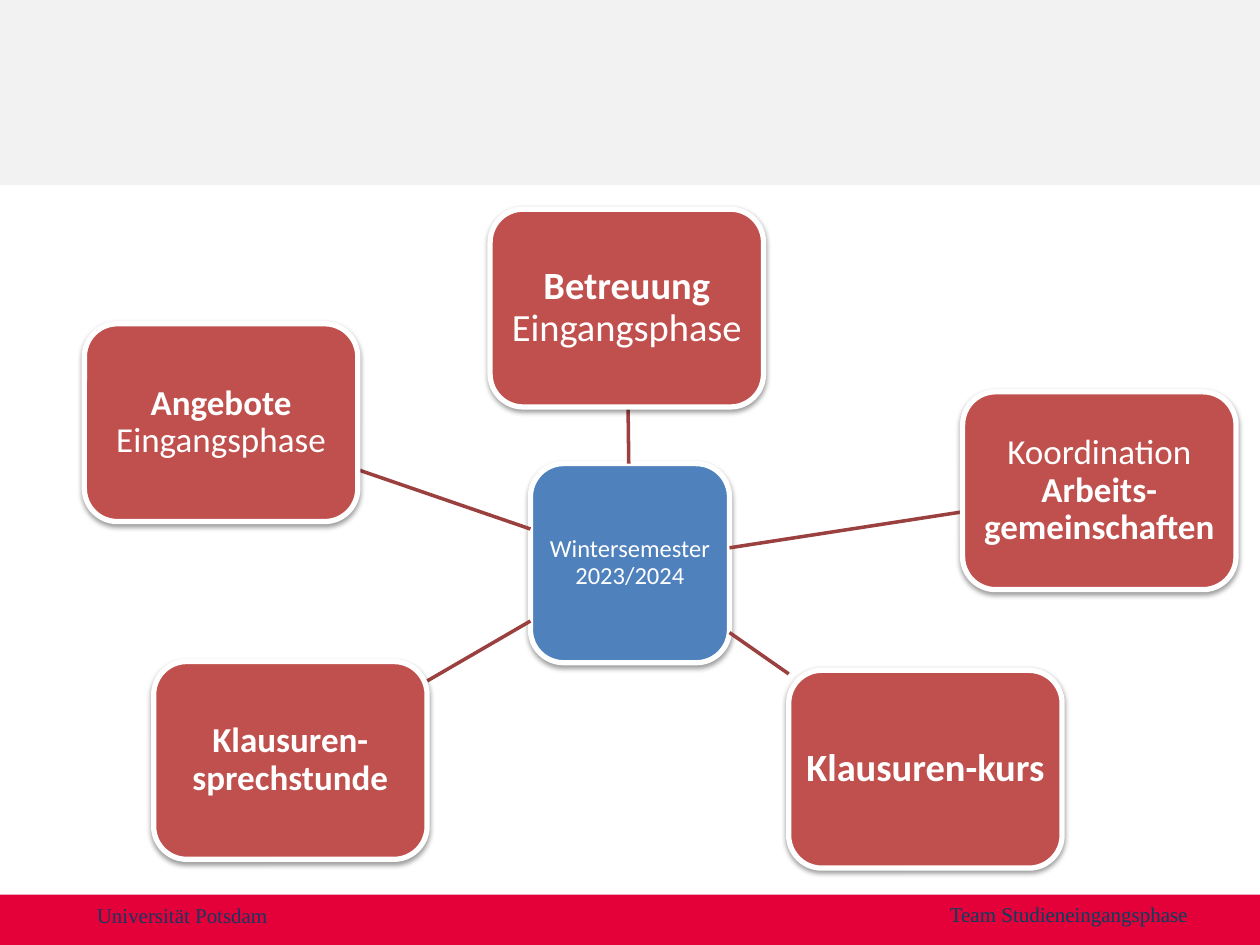
from typing import NamedTuple

from lxml.etree import SubElement
from pptx import Presentation
from pptx.dml.color import RGBColor
from pptx.enum.shapes import MSO_CONNECTOR, MSO_SHAPE
from pptx.enum.text import MSO_ANCHOR, PP_ALIGN
from pptx.oxml.ns import qn
from pptx.util import Inches, Pt

WHITE = RGBColor(0xFF, 0xFF, 0xFF)
HEADER_GREY = RGBColor(0xF2, 0xF2, 0xF2)
FOOTER_RED = RGBColor(0xE4, 0x01, 0x3A)
UNIVERSITY_BLUE = RGBColor(0x17, 0x37, 0x5E)
TEAM_BLUE = RGBColor(0x01, 0x42, 0x60)
HUB_BLUE = RGBColor(0x4F, 0x81, 0xBD)
TOPIC_RED = RGBColor(0xC0, 0x50, 0x4D)
SPOKE_RED = RGBColor(0x9A, 0x40, 0x3E)

SLIDE_WIDTH, SLIDE_HEIGHT = Inches(10), Inches(7.5)


class Area(NamedTuple):
    """Left, top, width and height in percent of the slide."""
    left: float
    top: float
    width: float
    height: float

    def place(self) -> tuple[int, int, int, int]:
        return (across(self.left), down(self.top),
                across(self.width), down(self.height))


class Box(NamedTuple):
    """A rounded box around a centre, in percent of the slide."""
    x: float
    y: float
    runs: tuple[tuple[str, bool], ...]
    size: int
    width: float = 21.7
    height: float = 20.93
    fill: RGBColor = TOPIC_RED
    inset: float = 0.06


def across(share: float) -> int:
    return round(SLIDE_WIDTH * share / 100)


def down(share: float) -> int:
    return round(SLIDE_HEIGHT * share / 100)


HUB = Box(50, 59.6, (("Wintersemester 2023/2024", False),), 14,
          15.8, 21.07, HUB_BLUE, 0.04)
TOPICS = (
    Box(49.75, 32.6, (("Betreuung", True), (" Eingangsphase", False)), 22),
    Box(87.25, 51.93, (("Koordination ", False),
                       ("Arbeits-gemeinschaften", True)), 20),
    Box(73.45, 81.4, (("Klausuren-kurs", True),), 22),
    Box(23.05, 80.47, (("Klausuren-sprechstunde", True),), 20),
    Box(17.55, 44.73, (("Angebote ", True), ("Eingangsphase", False)), 20),
)


def draw_band(slide, area: Area, colour: RGBColor) -> None:
    band = slide.shapes.add_shape(MSO_SHAPE.RECTANGLE, *area.place())
    band.shadow.inherit = False
    band.fill.solid()
    band.fill.fore_color.rgb = colour
    band.line.fill.background()


def draw_label(slide, area: Area, text: str, colour: RGBColor,
               anchor: MSO_ANCHOR, wrap: bool) -> None:
    frame = slide.shapes.add_textbox(*area.place()).text_frame
    frame.word_wrap = wrap
    frame.vertical_anchor = anchor
    frame.text = text
    font = frame.paragraphs[0].runs[0].font
    font.name, font.size = "Times New Roman", Pt(12)
    font.color.rgb = colour


def add_soft_shadow(shape) -> None:
    shape.shadow.inherit = False
    effects = shape._element.spPr.find(qn("a:effectLst"))
    shadow = SubElement(effects, qn("a:outerShdw"), blurRad=str(Pt(3.1)),
                        dist=str(Pt(1.6)), dir="5400000", rotWithShape="0")
    black = SubElement(shadow, qn("a:srgbClr"), val="000000")
    SubElement(black, qn("a:alpha"), val="38000")


def draw_box(slide, box: Box) -> None:
    area = Area(box.x - box.width / 2, box.y - box.height / 2,
                box.width, box.height)
    shape = slide.shapes.add_shape(MSO_SHAPE.ROUNDED_RECTANGLE, *area.place())
    shape.fill.solid()
    shape.fill.fore_color.rgb = box.fill
    shape.line.color.rgb = WHITE
    shape.line.width = Pt(3)
    add_soft_shadow(shape)

    frame = shape.text_frame
    frame.word_wrap = True
    frame.vertical_anchor = MSO_ANCHOR.MIDDLE
    frame.margin_left = frame.margin_right = Inches(box.inset)
    frame.margin_top = frame.margin_bottom = Inches(box.inset)
    paragraph = frame.paragraphs[0]
    paragraph.alignment = PP_ALIGN.CENTER
    paragraph.line_spacing = 0.9
    for text, bold in box.runs:
        run = paragraph.add_run()
        run.text = text
        run.font.name, run.font.size = "Calibri", Pt(box.size)
        run.font.bold = bold
        run.font.color.rgb = WHITE


def edge_towards(box: Box, other: Box) -> tuple[int, int]:
    """Point where the line between two centres leaves the box."""
    dx, dy = other.x - box.x, other.y - box.y
    reach = 1 / max(abs(dx) * 2 / box.width, abs(dy) * 2 / box.height)
    return across(box.x + dx * reach), down(box.y + dy * reach)


def draw_spoke(slide, hub: Box, topic: Box) -> None:
    spoke = slide.shapes.add_connector(
        MSO_CONNECTOR.STRAIGHT,
        *edge_towards(hub, topic), *edge_towards(topic, hub))
    spoke.line.color.rgb = SPOKE_RED
    spoke.line.width = Pt(2)
    SubElement(spoke._element.spPr, qn("a:effectLst"))


def main() -> None:
    presentation = Presentation()
    presentation.slide_width = SLIDE_WIDTH
    presentation.slide_height = SLIDE_HEIGHT
    slide = presentation.slides.add_slide(presentation.slide_layouts[6])

    # Header and footer bands
    draw_band(slide, Area(0, 0, 100, 19.6), HEADER_GREY)
    draw_band(slide, Area(0, 94.67, 100, 5.33), FOOTER_RED)
    draw_label(slide, Area(6.7, 94.13, 44.1, 5.33), "Universität Potsdam",
               UNIVERSITY_BLUE, MSO_ANCHOR.MIDDLE, True)

    # Hub with its topics
    draw_box(slide, HUB)
    for topic in TOPICS:
        draw_spoke(slide, HUB, topic)
        draw_box(slide, topic)

    # Team name in the footer
    draw_label(slide, Area(74.4, 94.8, 21.2, 4), "Team Studieneingangsphase",
               TEAM_BLUE, MSO_ANCHOR.TOP, False)

    presentation.save("out.pptx")


if __name__ == "__main__":
    main()
